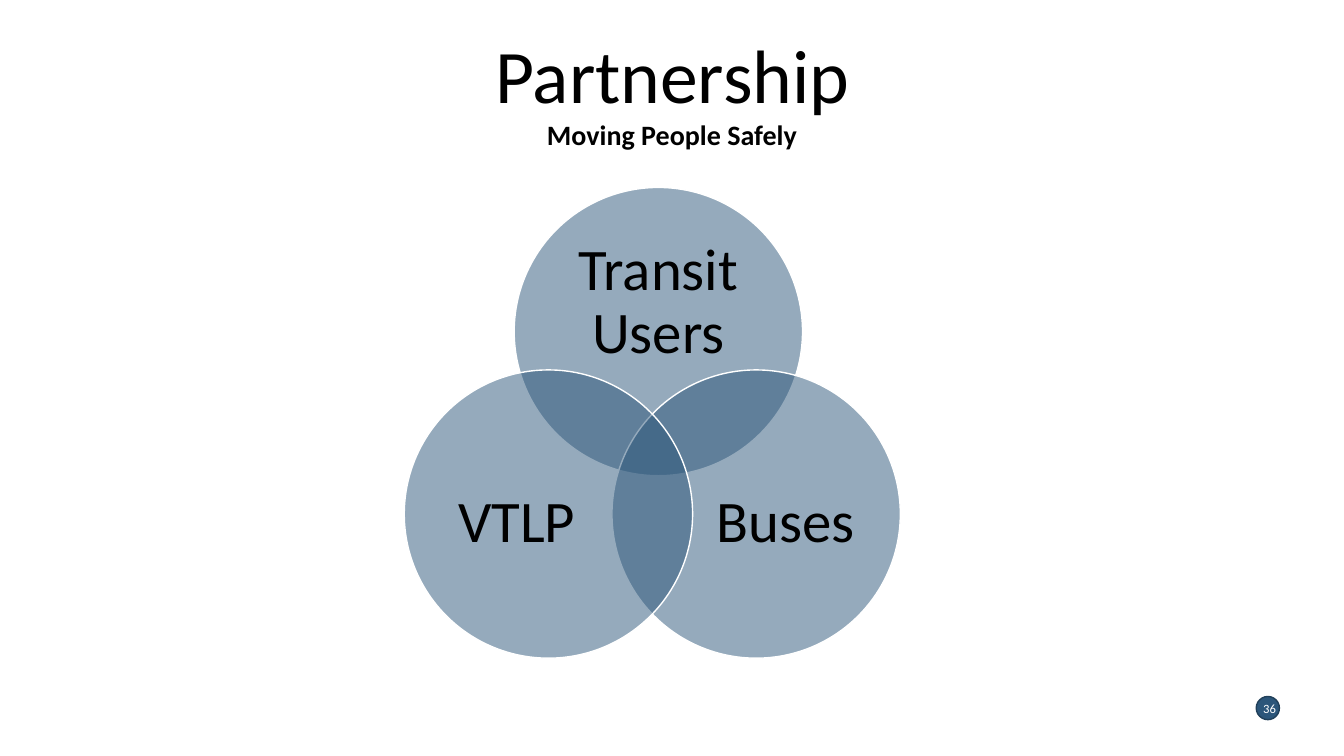
from dataclasses import dataclass

from lxml import etree
from pptx import Presentation
from pptx.dml.color import RGBColor
from pptx.enum import shapes, text
from pptx.oxml.ns import qn
from pptx.util import Inches, Pt

FONT = "Calibri"
BLACK, WHITE, NAVY, DARK_NAVY = "000000", "FFFFFF", "2C567A", "21405A"
VENN_DIAMETER = 2.86


@dataclass(frozen=True)
class Box:
    left: float
    top: float
    width: float
    height: float

    def lengths(self) -> tuple:
        return tuple(Inches(v) for v in (self.left, self.top, self.width, self.height))


@dataclass(frozen=True)
class Partner:
    name: str
    left: float
    top: float
    label: Box


PARTNERS = (
    Partner("Transit Users", 5.1, 1.86, Box(5.48, 2.36, 2.1, 1.29)),
    Partner("Buses", 6.07, 3.67, Box(6.94, 4.41, 1.71, 1.57)),
    Partner("VTLP", 4.01, 3.67, Box(4.27, 4.41, 1.71, 1.57)),
)


def color(value: str) -> RGBColor:
    return RGBColor.from_string(value)


def write(frame, words: str, size: float, ink: str = BLACK, bold: bool = False,
          align=text.PP_ALIGN.CENTER, spacing: float = 1.0,
          anchor=text.MSO_ANCHOR.TOP) -> None:
    frame.word_wrap = True
    frame.vertical_anchor = anchor
    paragraph = frame.paragraphs[0]
    paragraph.alignment = align
    paragraph.line_spacing = spacing
    run = paragraph.add_run()
    run.text = words
    run.font.name = FONT
    run.font.size = Pt(size)
    run.font.bold = bold
    run.font.color.rgb = color(ink)


def add_circle(slide, box: Box, outline: str, opacity: int = 100) -> None:
    circle = slide.shapes.add_shape(shapes.MSO_SHAPE.OVAL, *box.lengths())
    circle.shadow.inherit = False
    circle.fill.solid()
    circle.fill.fore_color.rgb = color(NAVY)
    circle.line.color.rgb = color(outline)
    circle.line.width = Pt(1)
    if opacity < 100:
        fill_color = circle.fill._xPr.find(qn("a:solidFill"))[0]
        etree.SubElement(fill_color, qn("a:alpha"), val=str(opacity * 1000))


def add_partner(slide, partner: Partner) -> None:
    add_circle(slide, Box(partner.left, partner.top, VENN_DIAMETER, VENN_DIAMETER), WHITE, 50)
    label = slide.shapes.add_textbox(*partner.label.lengths()).text_frame
    label.margin_left = label.margin_right = label.margin_top = label.margin_bottom = 0
    write(label, partner.name, 42, spacing=0.9, anchor=text.MSO_ANCHOR.MIDDLE)


def main() -> None:
    deck = Presentation()
    deck.slide_width, deck.slide_height = Inches(13.33), Inches(7.5)
    slide = deck.slides.add_slide(deck.slide_layouts[5])

    title = slide.shapes.title
    title.left, title.top, title.width, title.height = Box(1.42, 0.38, 10.5, 0.81).lengths()
    write(title.text_frame, "Partnership", 54, spacing=0.9, anchor=text.MSO_ANCHOR.MIDDLE)
    title.text_frame.auto_size = text.MSO_AUTO_SIZE.NONE

    for partner in PARTNERS:
        add_partner(slide, partner)

    motto = slide.shapes.add_textbox(*Box(4.98, 1.12, 3.37, 0.44).lengths()).text_frame
    write(motto, "Moving People Safely", 20, bold=True)
    motto.auto_size = text.MSO_AUTO_SIZE.SHAPE_TO_FIT_TEXT

    add_circle(slide, Box(12.46, 6.91, 0.23, 0.23), DARK_NAVY)
    page_number = slide.shapes.add_textbox(*Box(12.43, 6.9, 0.45, 0.36).lengths()).text_frame
    write(page_number, "36", 9, WHITE, align=text.PP_ALIGN.LEFT)

    deck.save("out.pptx")


if __name__ == "__main__":
    main()
